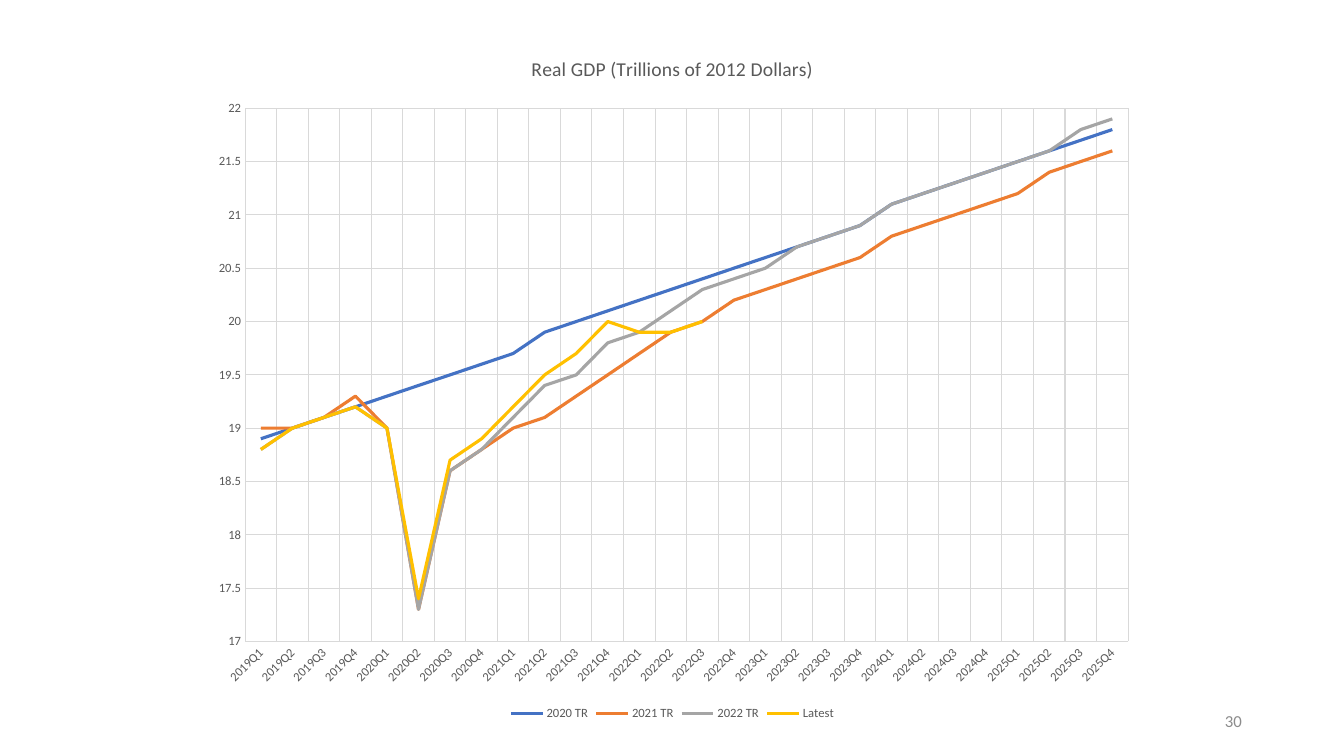
from dataclasses import dataclass

from lxml.etree import SubElement
from pptx import Presentation
from pptx.chart.data import CategoryChartData as ChartData
from pptx.dml.color import RGBColor as Color
from pptx.enum.chart import XL_CHART_TYPE as ChartType
from pptx.enum.chart import XL_LEGEND_POSITION as LegendPosition
from pptx.enum.chart import XL_TICK_MARK as TickMark
from pptx.enum.text import MSO_ANCHOR as Anchor
from pptx.enum.text import PP_ALIGN as Align
from pptx.oxml.ns import qn
from pptx.util import Cm, Pt


@dataclass(frozen=True)
class Theme:
    font: str = "Calibri"
    text: str = "595959"
    muted: str = "8C8C8C"
    grid: str = "D9D9D9"
    lines: tuple = ("4472C4", "ED7D31", "A5A5A5", "FFC000")
    title_size: float = 14
    number_size: float = 12
    label_size: float = 9
    line_width: float = 2.25
    grid_width: float = 0.75


THEME = Theme()
QUARTERS = [f"{year}Q{quarter}" for year in range(2019, 2026) for quarter in range(1, 5)]
FORECASTS = {
    "2020 TR": [
        18.9, 19, 19.1, 19.2, 19.3, 19.4, 19.5, 19.6, 19.7, 19.9, 20, 20.1, 20.2, 20.3,
        20.4, 20.5, 20.6, 20.7, 20.8, 20.9, 21.1, 21.2, 21.3, 21.4, 21.5, 21.6, 21.7, 21.8,
    ],
    "2021 TR": [
        19, 19, 19.1, 19.3, 19, 17.3, 18.6, 18.8, 19, 19.1, 19.3, 19.5, 19.7, 19.9,
        20, 20.2, 20.3, 20.4, 20.5, 20.6, 20.8, 20.9, 21, 21.1, 21.2, 21.4, 21.5, 21.6,
    ],
    "2022 TR": [
        18.8, 19, 19.1, 19.2, 19, 17.3, 18.6, 18.8, 19.1, 19.4, 19.5, 19.8, 19.9, 20.1,
        20.3, 20.4, 20.5, 20.7, 20.8, 20.9, 21.1, 21.2, 21.3, 21.4, 21.5, 21.6, 21.8, 21.9,
    ],
    "Latest": [
        18.8, 19, 19.1, 19.2, 19, 17.4, 18.7, 18.9, 19.2, 19.5, 19.7, 20, 19.9, 19.9, 20,
    ],
}


def style_font(font, size, color):
    font.name = THEME.font
    font.size = Pt(size)
    font.bold = False
    font.color.rgb = Color.from_string(color)


def style_line(line, color, width):
    line.color.rgb = Color.from_string(color)
    line.width = Pt(width)


def add_span(para, text, size, color):
    span = para.add_run()
    span.text = text
    style_font(span.font, size, color)


def add_page_number(page, number):
    box = page.shapes.add_textbox(Cm(23.93), Cm(17.65), Cm(7.62), Cm(1.02))
    frame = box.text_frame
    frame.word_wrap = True
    frame.vertical_anchor = Anchor.MIDDLE
    para = frame.paragraphs[0]
    para.alignment = Align.RIGHT
    add_span(para, number, THEME.number_size, THEME.muted)


def style_axis(axis):
    axis.major_tick_mark = axis.minor_tick_mark = TickMark.NONE
    axis.has_major_gridlines = True
    style_line(axis.major_gridlines.format.line, THEME.grid, THEME.grid_width)
    style_font(axis.tick_labels.font, THEME.label_size, THEME.text)


def place_plot(chart, **fractions):
    plot_area = chart.plots[0]._element.getparent()
    layout = plot_area.find(qn("c:layout"))
    if layout is None:
        layout = SubElement(plot_area, qn("c:layout"))
        plot_area.insert(0, layout)
    manual = SubElement(layout, qn("c:manualLayout"))
    settings = {"layoutTarget": "inner", "xMode": "edge", "yMode": "edge", **fractions}
    for name, value in settings.items():
        SubElement(manual, qn(f"c:{name}")).set("val", str(value))


def add_line_chart(page, title, categories, lines):
    data = ChartData(number_format="General")
    data.categories = categories
    for name, values in lines.items():
        data.add_series(name, values + [None] * (len(categories) - len(values)))
    chart = page.shapes.add_chart(
        ChartType.LINE, Cm(4.98), Cm(0.81), Cm(23.93), Cm(17.45), data
    ).chart
    style_font(chart.font, THEME.label_size, THEME.text)

    chart.has_title = True
    chart.chart_title.include_in_layout = False
    add_span(chart.chart_title.text_frame.paragraphs[0], title, THEME.title_size, THEME.text)

    chart.has_legend = True
    chart.legend.position = LegendPosition.BOTTOM
    chart.legend.include_in_layout = False
    style_font(chart.legend.font, THEME.label_size, THEME.text)

    quarters, trillions = chart.category_axis, chart.value_axis
    style_axis(quarters)
    style_axis(trillions)
    style_line(quarters.format.line, THEME.grid, THEME.grid_width)
    quarters._element.find(qn("c:txPr")).find(qn("a:bodyPr")).set("rot", "-2700000")
    trillions.format.line.fill.background()
    trillions.minimum_scale, trillions.maximum_scale = 17, 22
    trillions.major_unit = 0.5

    plot = chart.plots[0]
    plot.vary_by_categories = False
    for series, color in zip(plot.series, THEME.lines):
        series.smooth = False
        style_line(series.format.line, color, THEME.line_width)
    place_plot(chart, x=0.05, y=0.11, w=0.93, h=0.77)


def main():
    deck = Presentation()
    deck.slide_width, deck.slide_height = Cm(33.87), Cm(19.05)
    page = deck.slides.add_slide(deck.slide_layouts[6])
    add_page_number(page, "30")
    add_line_chart(page, "Real GDP (Trillions of 2012 Dollars)", QUARTERS, FORECASTS)
    deck.save("out.pptx")


if __name__ == "__main__":
    main()
